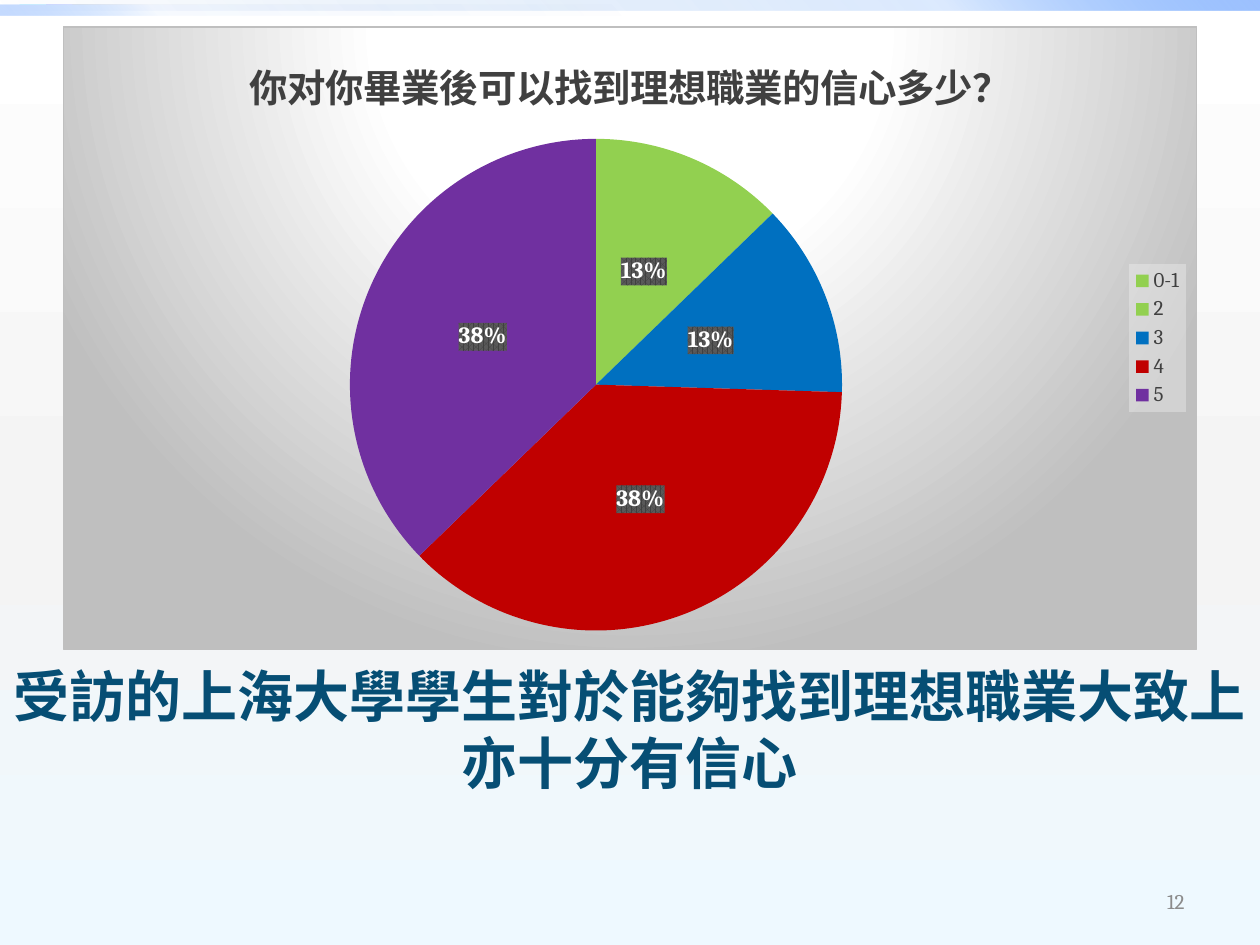
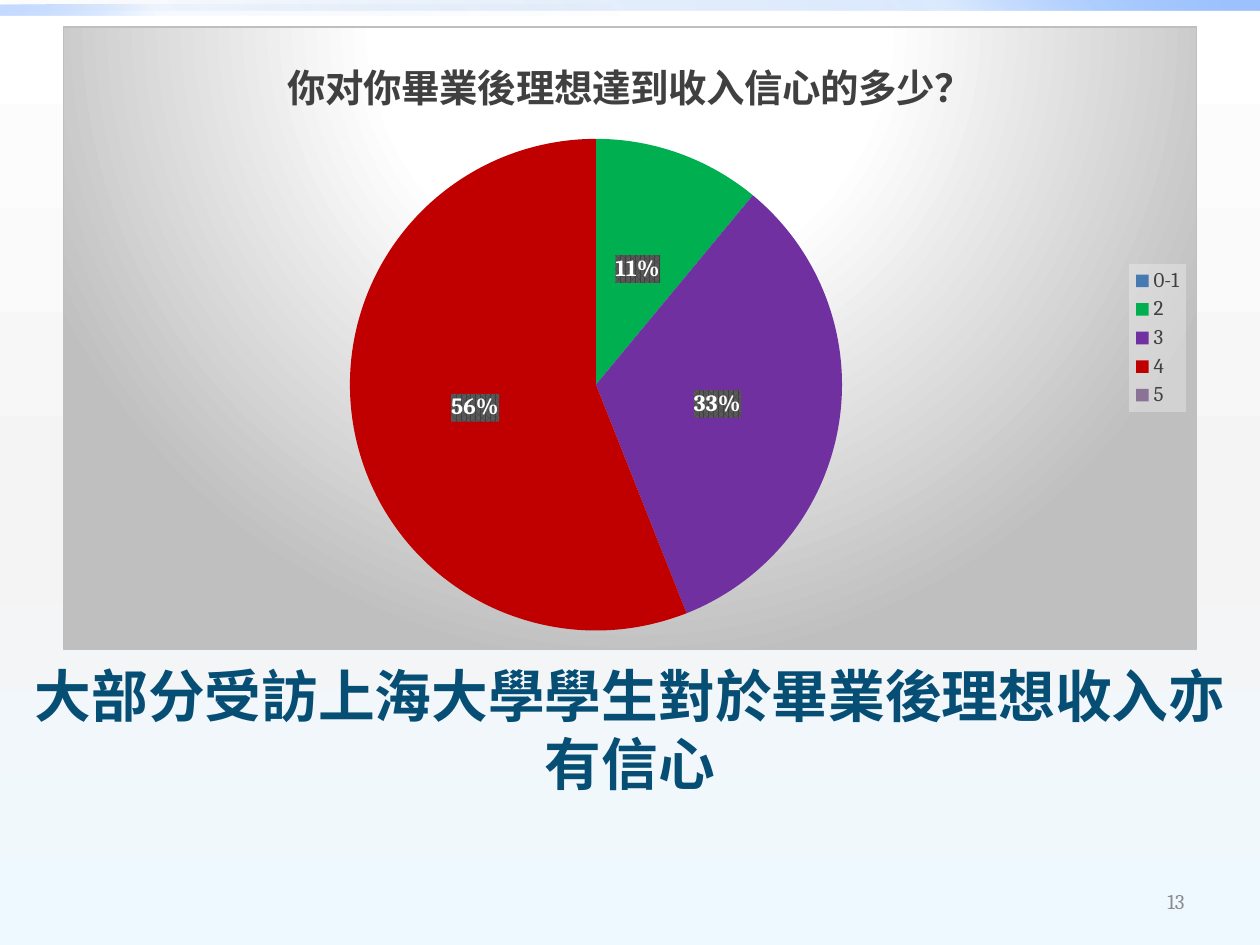
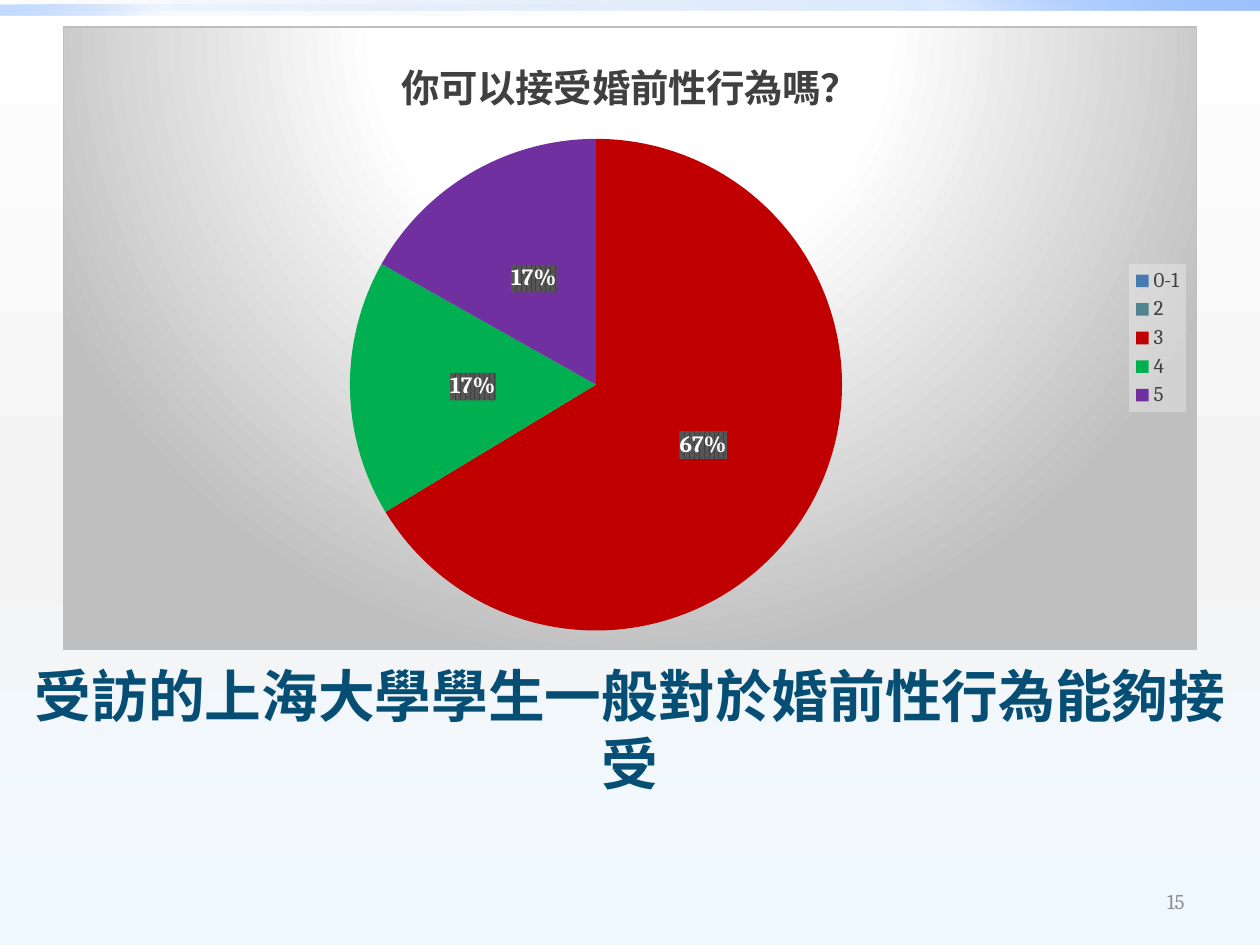
from dataclasses import dataclass

from pptx import Presentation
from pptx import util as u
from pptx.chart.data import CategoryChartData
from pptx.dml.color import RGBColor
from pptx.enum import chart as ch
from pptx.enum import shapes, text
from pptx.oxml import parse_xml
from pptx.oxml.ns import nsdecls, qn

HEAD, BODY = "Calibri", "Cambria"
NAVY, DARK, GREY, WHITE, BLACK = "064E74", "404040", "8C8C8C", "FFFFFF", "000000"
LIME, GREEN, BLUE, RED, PURPLE = "92D050", "00B050", "0070C0", "C00000", "7030A0"
STEEL, TEAL, MAUVE = "477AB1", "51848E", "8B7396"
SCORES = ("0-1", "2", "3", "4", "5")


@dataclass(frozen=True)
class Box:
    """A place on the slide, in points."""

    left: float
    top: float
    width: float
    height: float

    def lengths(self) -> list[u.Length]:
        """Return the four lengths for an add method."""
        return [u.Pt(n) for n in (self.left, self.top, self.width, self.height)]


@dataclass(frozen=True)
class Stop:
    """A gradient stop, all numbers in percent."""

    pos: int
    color: str
    alpha: int = 100


@dataclass(frozen=True)
class Band:
    """A gradient strip along the top edge."""

    box: Box
    angle: int
    stops: tuple[Stop, ...]


@dataclass(frozen=True)
class Survey:
    """One question with its answers and conclusion."""

    question: str
    finding: str
    size: float
    shares: tuple[int, ...]
    colors: tuple[str, ...]
    page: int


CHART_BOX = Box(36, 15, 648, 356.4)
FINDING_BOX = Box(0, 371.5, 720, 90)
PAGE_BOX = Box(516.24, 500.4, 167.76, 28.8)
BACKDROP = (Stop(0, WHITE), Stop(55, "F4F4F4"), Stop(100, "EEF9FF"))
CHART_GLOW = (Stop(0, WHITE), Stop(39, WHITE), Stop(100, "BFBFBF"))
BANDS = (
    Band(Box(0, 0, 720, 5.76), 315,
         (Stop(0, "0058B7", 0), Stop(75, "4F95FF", 20), Stop(100, "9EC2FF"))),
    Band(Box(0, 2.88, 360, 5.76), 135,
         (Stop(0, "0058B7", 0), Stop(75, "4F95FF", 5), Stop(100, "9EC2FF", 60))),
)
SURVEYS = (
    Survey("你对你畢業後可以找到理想職業的信心多少？",
           "受訪的上海大學學生對於能夠找到理想職業大致上亦十分有信心", 32,
           (0, 13, 13, 38, 38), (LIME, LIME, BLUE, RED, PURPLE), 12),
    Survey("你对你畢業後理想達到收入信心的多少？",
           "大部分受訪上海大學學生對於畢業後理想收入亦有信心", 32.4,
           (0, 11, 33, 56, 0), (STEEL, GREEN, PURPLE, RED, MAUVE), 13),
    Survey("你可以接受婚前性行為嗎？",
           "受訪的上海大學學生一般對於婚前性行為能夠接受", 32.4,
           (0, 0, 67, 17, 17), (STEEL, TEAL, RED, GREEN, PURPLE), 15),
)


def rgb(value: str) -> RGBColor:
    """Turn a hex string into a colour."""
    return RGBColor.from_string(value)


def style(font, size: float, color: str, name: str = BODY, bold: bool = False) -> None:
    """Set the four properties of a font."""
    font.size, font.name, font.bold = u.Pt(size), name, bold
    font.color.rgb = rgb(color)


def color_xml(color: str, alpha: int = 100) -> str:
    """Return a colour element with its opacity."""
    return f'<a:srgbClr val="{color}"><a:alpha val="{alpha * 1000}"/></a:srgbClr>'


def gradient_xml(stops: tuple[Stop, ...], shade: str) -> str:
    """Return a gradient fill with the given shading element."""
    gs = "".join(f'<a:gs pos="{st.pos * 1000}">{color_xml(st.color, st.alpha)}</a:gs>'
                 for st in stops)
    return f'<a:gradFill {nsdecls("a")}><a:gsLst>{gs}</a:gsLst>{shade}</a:gradFill>'


def sp_pr(content: str):
    """Return chart shape properties holding the given XML."""
    return parse_xml(f'<c:spPr {nsdecls("c", "a")}>{content}</c:spPr>')


def fill_linear(fill, parent, stops: tuple[Stop, ...], angle: int) -> None:
    """Give a fill a linear gradient of any number of stops."""
    fill.solid()
    solid = parent.find(".//" + qn("a:solidFill"))
    shade = f'<a:lin ang="{angle * 60000}" scaled="0"/>'
    solid.getparent().replace(solid, parse_xml(gradient_xml(stops, shade)))


def add_band(s, band: Band) -> None:
    """Draw a gradient strip."""
    sp = s.shapes.add_shape(shapes.MSO_SHAPE.RECTANGLE, *band.box.lengths())
    sp.shadow.inherit = False
    sp.line.fill.background()
    fill_linear(sp.fill, sp.element.spPr, band.stops, band.angle)


def add_text(s, box: Box, words: str, *, size: float, color: str, align,
             name: str = BODY, bold: bool = False) -> None:
    """Write one paragraph, centred vertically in its box."""
    tf = s.shapes.add_textbox(*box.lengths()).text_frame
    tf.word_wrap = True
    tf.vertical_anchor = text.MSO_ANCHOR.MIDDLE
    p = tf.paragraphs[0]
    p.alignment = align
    r = p.add_run()
    r.text = words
    style(r.font, size, color, name, bold)


def label_slices(series, shares: tuple[int, ...]) -> None:
    """Show percentages on dark plates, leaving empty slices bare."""
    labels = series.data_labels
    labels.show_value = True
    labels.number_format, labels.number_format_is_linked = '0"%"', False
    labels.position = ch.XL_LABEL_POSITION.CENTER
    style(labels.font, 13.3, WHITE, bold=True)
    el = labels._element
    el.find(qn("c:txPr")).addprevious(sp_pr(
        f'<a:pattFill prst="pct75"><a:fgClr>{color_xml(DARK)}</a:fgClr>'
        f'<a:bgClr>{color_xml("595959")}</a:bgClr></a:pattFill>'))
    empty = [i for i, share in enumerate(shares) if not share]
    for n, i in enumerate(empty):
        el.insert(n, parse_xml(f'<c:dLbl {nsdecls("c")}><c:idx val="{i}"/>'
                               '<c:delete val="1"/></c:dLbl>'))


def place_plot(chart, x: float, y: float, w: float, h: float) -> None:
    """Fix the pie's place as fractions of the chart."""
    area = chart._chartSpace.chart.plotArea
    for old in area.findall(qn("c:layout")):
        area.remove(old)
    sizes = "".join(f'<c:{tag} val="{val}"/>'
                    for tag, val in zip("xywh", (x, y, w, h)))
    area.insert(0, parse_xml(
        f'<c:layout {nsdecls("c")}><c:manualLayout><c:layoutTarget val="inner"/>'
        f'<c:xMode val="edge"/><c:yMode val="edge"/>{sizes}'
        '</c:manualLayout></c:layout>'))


def add_pie(s, survey: Survey) -> None:
    """Draw the answers to a question as a pie chart."""
    data = CategoryChartData()
    data.categories = SCORES
    data.add_series(survey.question, survey.shares)
    chart = s.shapes.add_chart(ch.XL_CHART_TYPE.PIE, *CHART_BOX.lengths(), data).chart
    style(chart.font, 10, BLACK)

    chart.has_title = True
    p = chart.chart_title.text_frame.paragraphs[0]
    r = p.add_run()
    r.text = survey.question
    style(r.font, 22, DARK, bold=True)
    chart.chart_title.include_in_layout = False

    chart.has_legend = True
    legend = chart.legend
    legend.position = ch.XL_LEGEND_POSITION.RIGHT
    legend.include_in_layout = False
    style(legend.font, 12, DARK)
    legend._element.find(qn("c:txPr")).addprevious(
        sp_pr(f'<a:solidFill>{color_xml("F2F2F2", 39)}</a:solidFill>'))

    plot = chart.plots[0]
    plot.vary_by_categories = True
    for i, color in enumerate(survey.colors):
        fill = plot.series[0].points[i].format.fill
        fill.solid()
        fill.fore_color.rgb = rgb(color)
    label_slices(plot.series[0], survey.shares)
    place_plot(chart, 0.25, 0.18, 0.44, 0.79)

    glow = gradient_xml(CHART_GLOW, '<a:path path="circle"><a:fillToRect l="50000" '
                        't="-80000" r="50000" b="180000"/></a:path>')
    border = f'<a:ln w="{u.Pt(0.75)}"><a:solidFill>{color_xml("BFBFBF")}</a:solidFill></a:ln>'
    chart._chartSpace.chart.addnext(sp_pr(glow + border))


def add_survey(prs, survey: Survey) -> None:
    """Build the slide of one question."""
    s = prs.slides.add_slide(prs.slide_layouts[6])
    for band in BANDS:
        add_band(s, band)
    add_text(s, FINDING_BOX, survey.finding, size=survey.size, color=NAVY, name=HEAD,
             bold=True, align=text.PP_ALIGN.CENTER)
    add_pie(s, survey)
    add_text(s, PAGE_BOX, str(survey.page), size=12, color=GREY,
             align=text.PP_ALIGN.RIGHT)


def main() -> None:
    """Build and save the presentation."""
    prs = Presentation()
    prs.slide_width, prs.slide_height = u.Pt(720), u.Pt(540)
    master = prs.slide_master
    fill_linear(master.background.fill, master.element, BACKDROP, 90)
    for survey in SURVEYS:
        add_survey(prs, survey)
    prs.save("out.pptx")


if __name__ == "__main__":
    main()
